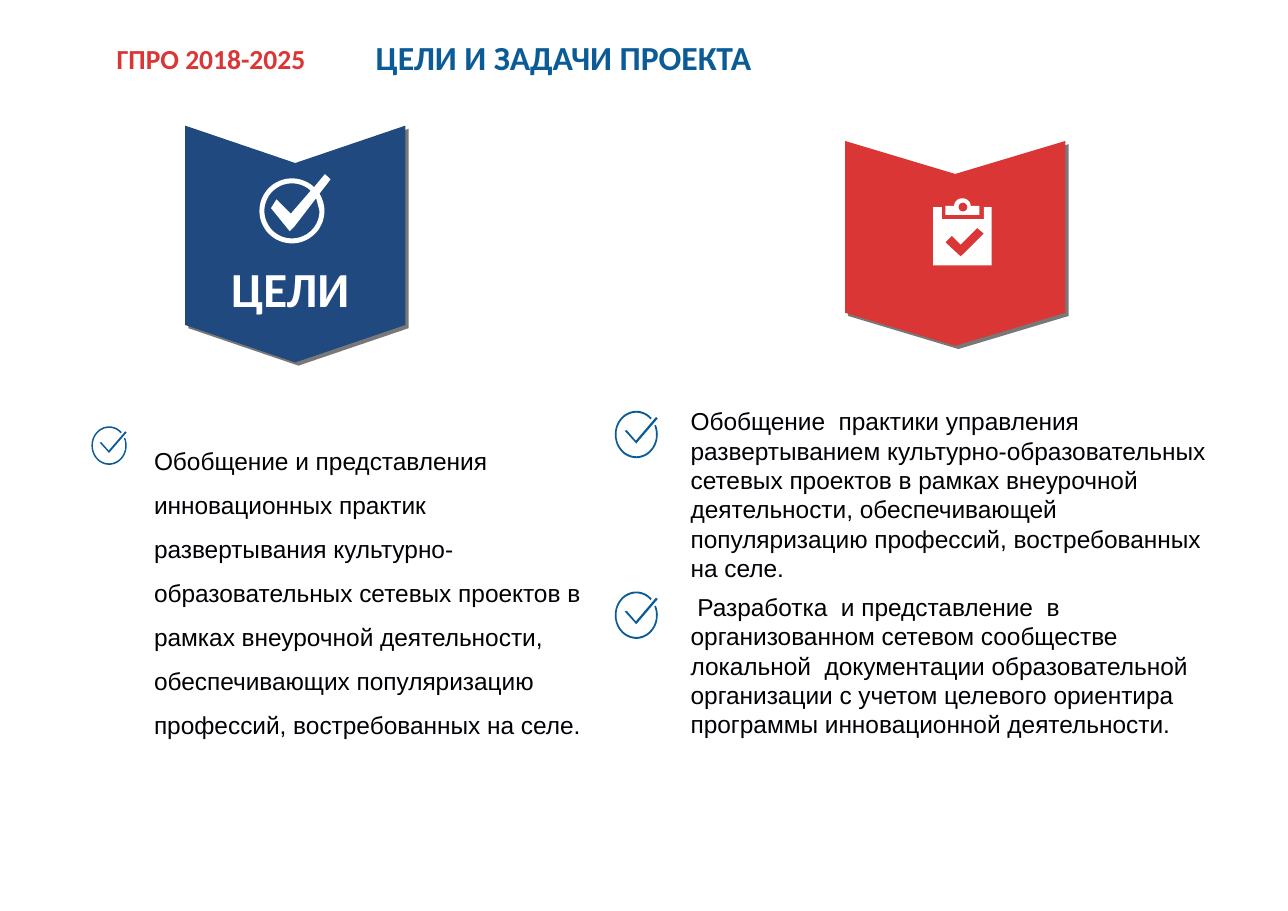
import math

import pptx
import pptx.dml.color
import pptx.enum.text
import pptx.oxml
import pptx.oxml.ns
import pptx.util

RGBColor = pptx.dml.color.RGBColor
BLUE = RGBColor(0x0B, 0x5B, 0x97)
NAVY = RGBColor(0x20, 0x49, 0x7F)
RED = RGBColor(0xD9, 0x36, 0x35)
WHITE = RGBColor(0xFF, 0xFF, 0xFF)
INK = RGBColor(0x00, 0x01, 0x05)

# Grid of square cells, ten to the inch
CELL = pptx.util.Inches(0.1)
COLUMNS, ROWS = 116.9, 82.7

presentation = pptx.Presentation()
presentation.slide_width = round(COLUMNS * CELL)
presentation.slide_height = round(ROWS * CELL)
slide = presentation.slides.add_slide(presentation.slide_layouts[5])


def arc(center_x, center_y, radius_x, radius_y, start, end, steps=60):
    """Points along an ellipse, angles in degrees, clockwise from the right."""
    angles = [math.radians(start + (end - start) * i / steps) for i in range(steps + 1)]
    return [(center_x + radius_x * math.cos(a), center_y + radius_y * math.sin(a))
            for a in angles]


def draw_outline(contours, color):
    """One filled freeform; inner contours become holes."""
    contours = [[(column * 100, row * 100) for column, row in contour] for contour in contours]
    builder = slide.shapes.build_freeform(*contours[0][0], scale=CELL / 100)
    for number, contour in enumerate(contours):
        if number:
            builder.move_to(*contour[0])
        builder.add_line_segments(contour[1:], close=True)
    shape = builder.convert_to_shape()
    shape.fill.solid()
    shape.fill.fore_color.rgb = color
    shape.line.fill.background()
    shape.shadow.inherit = False
    return shape


# Badges: left, top, width, height, depth of the notch, colour
SHADOW = (
    '<a:outerShdw %s blurRad="0" dist="38100" dir="2700000" algn="tl" rotWithShape="0">'
    '<a:srgbClr val="3F3F3F"><a:alpha val="70000"/></a:srgbClr></a:outerShdw>'
    % pptx.oxml.ns.nsdecls("a")
)
badges = [(16.8, 11.4, 20, 21.5, 3.4, NAVY), (76.7, 12.8, 20, 18.6, 3, RED)]
for left, top, width, height, notch, color in badges:
    middle, right, bottom = left + width / 2, left + width, top + height
    badge = draw_outline([[(left, top), (middle, top + notch), (right, top),
                           (right, bottom - notch), (middle, bottom),
                           (left, bottom - notch)]], color)
    effects = badge.element.spPr.find(pptx.oxml.ns.qn("a:effectLst"))
    effects.append(pptx.oxml.parse_xml(SHADOW))

# Title and text boxes
texts = [
    {"place": (33, 1.2, 63.8, 7.9), "title": True,
     "font": {"size": 22, "bold": True}, "color": BLUE,
     "paragraphs": ["ЦЕЛИ И ЗАДАЧИ ПРОЕКТА"]},
    {"place": (9.6, 3.3, 19.2, 4),
     "font": {"size": 18, "bold": True}, "color": RED,
     "paragraphs": ["ГПРО 2018-2025"]},
    {"place": (20, 23, 13.5, 7.4),
     "font": {"size": 32, "bold": True}, "color": WHITE,
     "paragraphs": ["ЦЕЛИ"]},
    {"place": (12.5, 38.7, 42, 29.1), "body": True, "spacing": 1.5,
     "font": {"size": 16, "name": "Arial"}, "color": INK,
     "paragraphs": [
         "Обобщение и представления инновационных практик развертывания "
         "культурно-образовательных сетевых проектов в рамках внеурочной "
         "деятельности, обеспечивающих популяризацию профессий, "
         "востребованных на селе."]},
    {"place": (61.2, 36.4, 50.6, 36.2), "body": True,
     "font": {"size": 16, "name": "Arial"}, "color": INK,
     "paragraphs": [
         "Обобщение  практики управления развертыванием "
         "культурно-образовательных сетевых проектов в рамках внеурочной "
         "деятельности, обеспечивающей популяризацию профессий, "
         "востребованных на селе.",
         " Разработка  и представление  в организованном сетевом сообществе "
         "локальной  документации образовательной организации с учетом "
         "целевого ориентира программы инновационной деятельности."]},
]
for text in texts:
    is_title, is_body = text.get("title", False), text.get("body", False)
    place = [round(length * CELL) for length in text["place"]]
    if is_title:
        shape = slide.shapes.title
        shape.left, shape.top, shape.width, shape.height = place
    else:
        shape = slide.shapes.add_textbox(*place)
    frame = shape.text_frame
    frame.word_wrap = is_title or is_body
    frame.auto_size = pptx.enum.text.MSO_AUTO_SIZE.NONE
    if is_title:
        frame.vertical_anchor = pptx.enum.text.MSO_ANCHOR.MIDDLE
        frame.margin_left = frame.margin_right = pptx.util.Inches(0.11)
    for number, wording in enumerate(text["paragraphs"]):
        paragraph = frame.add_paragraph() if number else frame.paragraphs[0]
        paragraph.text = wording
        paragraph.alignment = pptx.enum.text.PP_ALIGN.LEFT
        if is_body:
            paragraph.line_spacing = text.get("spacing", 1.0)
            paragraph.space_before = pptx.util.Pt(3.2 if number else 0)
            paragraph.space_after = pptx.util.Pt(3)
            paragraph._p.get_or_add_pPr().set("marL", str(pptx.util.Inches(0.05)))
        font_format = {"name": "Calibri", **text["font"]}
        font_format["size"] = pptx.util.Pt(font_format["size"])
        for attribute, value in font_format.items():
            setattr(paragraph.font, attribute, value)
        paragraph.font.color.rgb = text["color"]

# Check marks beside the paragraphs, drawn as shares of their own size
ring = arc(0.5, 0.5, 0.5, 0.5, -24, 316) + arc(0.5, 0.5, 0.46, 0.46, 316, -24)
tick = [(0.23, 0.42), (0.28, 0.41), (0.49, 0.63), (0.96, 0.13), (1, 0.16), (0.5, 0.69)]
for left, top, width, height in [(8.3, 38.7, 3.2, 3.5), (55.8, 37.3, 3.9, 4.3),
                                 (55.8, 53.7, 3.9, 4.3)]:
    draw_outline([[(left + x * width, top + y * height) for x, y in contour]
                  for contour in (ring, tick)], BLUE)

# Clipboard on the red badge: clip, then board
draw_outline([
    [(88.9, 18.7), *arc(87.35, 18.7, 0.75, 0.7, 0, -180),
     (85.8, 18.7), (85.8, 19.5), (88.9, 19.5)],
    arc(87.4, 18.8, 0.4, 0.4, 0, 360),
], WHITE)
draw_outline([
    [(89.3, 18.8), (89.3, 19.9), (85.5, 19.9), (85.5, 18.8),
     (84.7, 18.8), (84.7, 24.1), (90, 24.1), (90, 18.8)],
    [(87.2, 23.3), (85.8, 22), (86.4, 21.4), (87.2, 22.2), (88.7, 20.7), (89.3, 21.2)],
], WHITE)

# Large check mark on the blue badge
draw_outline([
    [(30, 16.3), (29.5, 15.8), *arc(26.5, 19.15, 2.95, 2.95, -47, -392)],
    [*arc(26.5, 19.15, 2.5, 2.5, 0, 313), (26.4, 19.4), (25.1, 18.1),
     (24.6, 18.9), (26.3, 21), (26.7, 20.6), (28.7, 18)],
], WHITE)

presentation.save("out.pptx")
